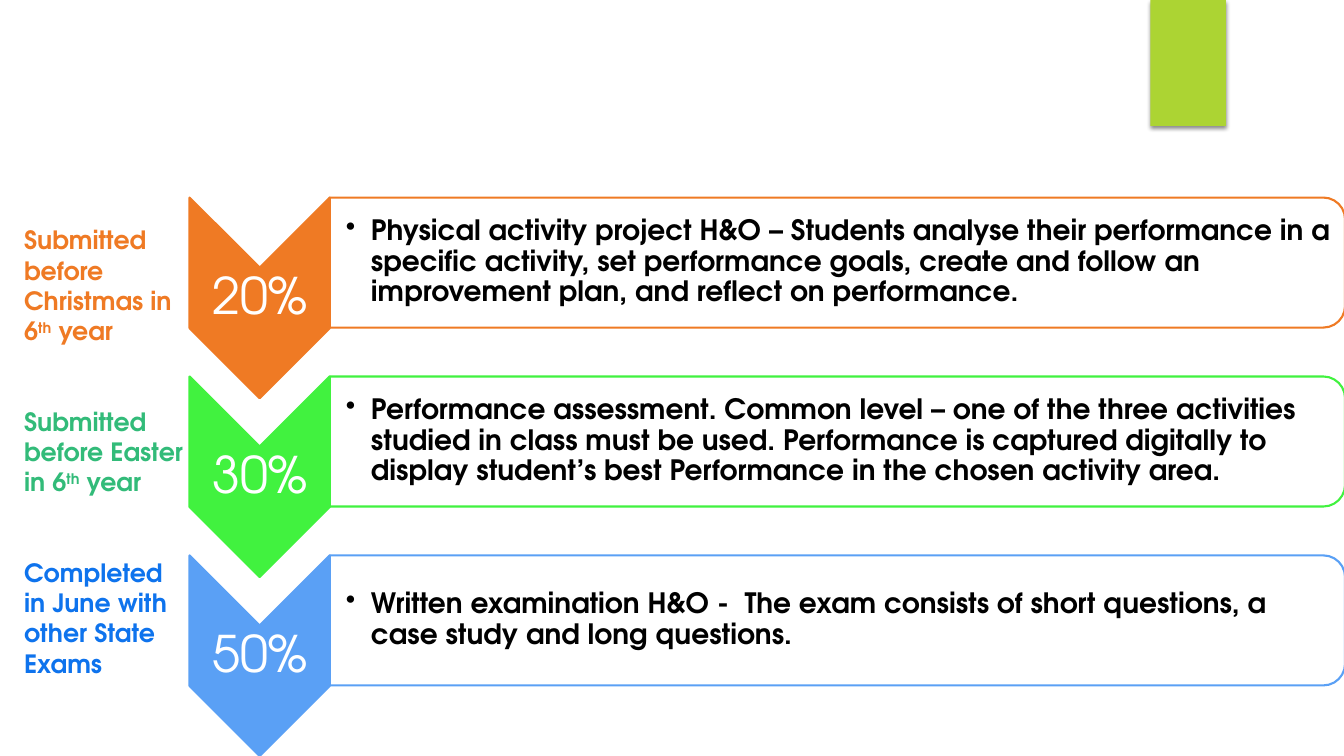
import dataclasses

import lxml.etree
import pptx
import pptx.dml.color
import pptx.enum.shapes
import pptx.enum.text
import pptx.oxml
import pptx.oxml.ns
import pptx.util

Inches = pptx.util.Inches
Pt = pptx.util.Pt
SHAPE = pptx.enum.shapes.MSO_SHAPE
FONT = "TeX Gyre Adventor"
FIRST_TOP, STEP_PITCH = 1.96, 1.775
CHEVRON_W, CHEVRON_H = 1.39, 1.99
PANEL_W, PANEL_H = 10.07, 1.29
CHEVRON_LEFT, PANEL_LEFT = 1.88, 3.27


@dataclasses.dataclass
class Step:
    share: str
    detail: str
    color: str
    deadline: list[str]  # every second part is superscript
    deadline_color: str


STEPS = [
    Step("20%", "Physical activity project H&O – Students analyse their performance in a "
         "specific activity, set performance goals, create and follow an improvement plan, "
         "and reflect on performance.", "EF7A24",
         ["Submitted before Christmas in 6", "th", " year"], "EF7A24"),
    Step("30%", "Performance assessment. Common level – one of the three activities studied "
         "in class must be used. Performance is captured digitally to display student’s best "
         "Performance in the chosen activity area.", "41F23F",
         ["Submitted before Easter in 6", "th", " year"], "32BB79"),
    Step("50%", "Written examination H&O -  The exam consists of short questions, a case "
         "study and long questions.", "5AA0F5",
         ["Completed in June with other State Exams"], "0E73ED"),
]


def rgb(color: str) -> pptx.dml.color.RGBColor:
    return pptx.dml.color.RGBColor.from_string(color)


def style_run(r, size: float, color: str, bold: bool = False) -> None:
    r.font.name = FONT
    r.font.size = Pt(size)
    r.font.bold = bold
    r.font.color.rgb = rgb(color)


def add_shape(s, kind, left: float, top: float, width: float, height: float,
              fill: str, line: str | None = None):
    sp = s.shapes.add_shape(kind, Inches(left), Inches(top), Inches(width), Inches(height))
    sp.shadow.inherit = False
    sp.fill.solid()
    sp.fill.fore_color.rgb = rgb(fill)
    if line:
        sp.line.color.rgb = rgb(line)
        sp.line.width = Pt(1.5)
    else:
        sp.line.fill.background()
    return sp


def add_turned(s, kind, left: float, top: float, width: float, height: float,
               fill: str, line: str) -> None:
    """Place a shape turned by 90 degrees so that it covers the given area."""
    shift = (width - height) / 2
    sp = add_shape(s, kind, left + shift, top - shift, height, width, fill, line)
    sp.rotation = 90


def add_text(s, left: float, top: float, width: float, height: float,
             margins: tuple[float, float, float, float], anchor):
    tf = s.shapes.add_textbox(Inches(left), Inches(top), Inches(width),
                              Inches(height)).text_frame
    tf.word_wrap = True
    tf.vertical_anchor = anchor
    tf.margin_left, tf.margin_top, tf.margin_right, tf.margin_bottom = map(Inches, margins)
    return tf


def add_bullet(p, indent: float) -> None:
    pPr = p._p.get_or_add_pPr()
    pPr.set("marL", str(Inches(indent)))
    pPr.set("indent", str(-Inches(indent)))
    bullet = lxml.etree.SubElement(pPr, pptx.oxml.ns.qn("a:buChar"))
    bullet.set("char", "•")


def add_step(s, step: Step, top: float) -> None:
    middle = pptx.enum.text.MSO_ANCHOR.MIDDLE
    # Chevron with its share of the marks
    add_turned(s, SHAPE.CHEVRON, CHEVRON_LEFT, top, CHEVRON_W, CHEVRON_H,
               step.color, step.color)
    tf = add_text(s, CHEVRON_LEFT, top + 0.7, CHEVRON_W, 0.6, (0.03,) * 4, middle)
    tf.text = step.share
    p = tf.paragraphs[0]
    p.alignment = pptx.enum.text.PP_ALIGN.CENTER
    p.line_spacing = 0.9
    style_run(p.runs[0], 36, "FFFFFF")

    # Panel with the description
    add_turned(s, SHAPE.ROUND_2_SAME_RECTANGLE, PANEL_LEFT, top, PANEL_W, PANEL_H,
               "FFFFFF", step.color)
    tf = add_text(s, PANEL_LEFT, top + 0.06, 10, 1.16, (0.16, 0.01, 0.01, 0.01), middle)
    tf.text = step.detail
    p = tf.paragraphs[0]
    p.line_spacing = 0.9
    add_bullet(p, 0.25)
    style_run(p.runs[0], 20, "000000", True)


def add_deadlines(s) -> None:
    tf = add_text(s, 0.14, 2.18, 1.82, 4.64, (0.1, 0.05, 0.1, 0.05),
                  pptx.enum.text.MSO_ANCHOR.TOP)
    for i, step in enumerate(STEPS):
        p = tf.add_paragraph() if i else tf.paragraphs[0]
        if i:
            p.space_before = Pt(43.2)
        for j, part in enumerate(step.deadline):
            r = p.add_run()
            r.text = part
            style_run(r, 18, step.deadline_color, True)
            if j % 2:
                r._r.get_or_add_rPr().set("baseline", "30000")


def add_tab(s) -> None:
    tab = add_shape(s, SHAPE.RECTANGLE, 11.41, 0, 0.75, 1.25, "ACD433")
    effects = tab._element.spPr.find(pptx.oxml.ns.qn("a:effectLst"))
    effects.append(pptx.oxml.parse_xml(
        f'<a:outerShdw {pptx.oxml.ns.nsdecls("a")} blurRad="{Pt(3)}" dist="{Pt(2)}" '
        'dir="5400000" rotWithShape="0"><a:srgbClr val="000000">'
        '<a:alpha val="45000"/></a:srgbClr></a:outerShdw>'))


def main() -> None:
    prs = pptx.Presentation()
    prs.slide_width, prs.slide_height = Inches(13.33), Inches(7.5)
    s = prs.slides.add_slide(prs.slide_layouts[6])
    s.background.fill.solid()
    s.background.fill.fore_color.rgb = rgb("FFFFFF")
    add_tab(s)
    for i, step in enumerate(STEPS):
        add_step(s, step, FIRST_TOP + i * STEP_PITCH)
    add_deadlines(s)
    prs.save("out.pptx")


if __name__ == "__main__":
    main()
